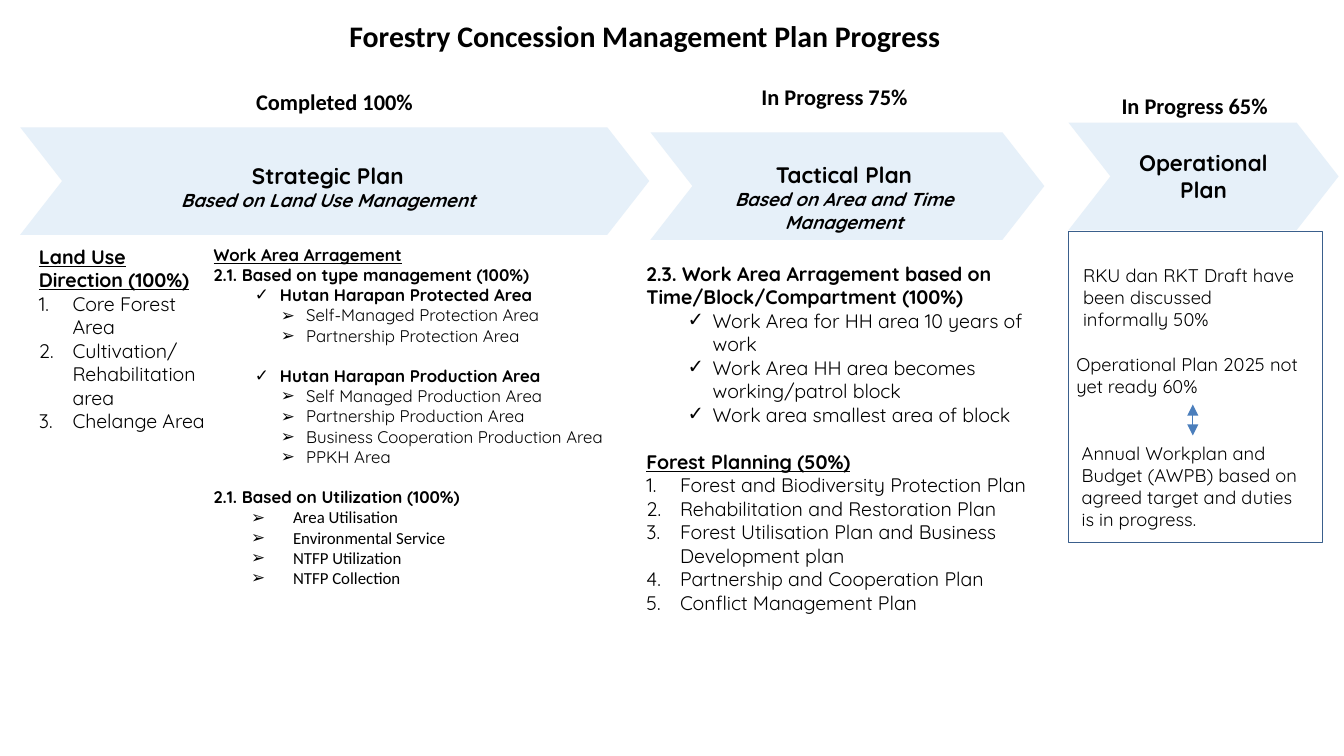
"""Build the forestry concession management plan progress slide."""
from lxml import etree
from pptx import Presentation
from pptx import util as u
from pptx.dml import color
from pptx.enum import shapes, text
from pptx.oxml import ns

COLORS = {"text": "000000", "chevron": "DEEBF7", "frame": "3A5F8C", "arrow": "4B7EBC"}
MARKS = {
    "none": ("buNone", {}, 0, 0),
    "number": ("buAutoNum", {"type": "arabicPeriod"}, 18, -18),
    "tick": ("buChar", {"char": "✓"}, 35.5, -13.5),
    "point": ("buChar", {"char": "➢"}, 49.5, -13.5),
    "wide point": ("buChar", {"char": "➢"}, 42.5, -22.5),
}
CENTER, LEFT = text.PP_ALIGN.CENTER, text.PP_ALIGN.LEFT


def place(box, left, top, width, height):
    """Position a box and make its text wrap from the top."""
    box.left, box.top, box.width, box.height = map(u.Pt, (left, top, width, height))
    frame = box.text_frame
    frame.word_wrap = True
    frame.auto_size = text.MSO_AUTO_SIZE.NONE
    frame.vertical_anchor = text.MSO_ANCHOR.TOP
    return frame


def add_line(frame, words, size, style="", mark="none", gap=0, font="Quicksand", align=LEFT):
    """Add a paragraph; style holds b, i and u for bold, italic and underline."""
    para = frame.paragraphs[0] if not frame.text else frame.add_paragraph()
    para.add_run().text = words
    tag, attributes, margin, indent = MARKS[mark]
    properties = para._p.get_or_add_pPr()
    properties.set("marL", str(u.Pt(margin)))
    properties.set("indent", str(u.Pt(indent)))
    etree.SubElement(properties, ns.qn("a:" + tag), attributes)
    para.alignment = align
    para.space_before = u.Pt(gap)
    para.font.name = font
    para.font.size = u.Pt(size)
    para.font.bold = "b" in style
    para.font.italic = "i" in style
    para.font.underline = "u" in style
    para.font.color.rgb = color.RGBColor.from_string(COLORS["text"])


deck = Presentation()
deck.slide_width, deck.slide_height = u.Pt(720), u.Pt(405)
page = deck.slides.add_slide(deck.slide_layouts.get_by_name("Comparison"))
holders = {holder.placeholder_format.idx: holder for holder in page.placeholders}
spare = holders[3]._element
spare.getparent().remove(spare)

title = place(holders[0], 180, 5.8, 378, 26.6)
add_line(title, "Forestry Concession Management Plan Progress", 16, "b", font="Calibri")

land_use = place(holders[1], 13.7, 127.4, 108, 134.6)
add_line(land_use, "Land Use Direction (100%)", 10.5, "bu")
for words in ("Core Forest Area", "Cultivation/ Rehabilitation area", "Chelange Area"):
    add_line(land_use, words, 10.5, mark="number")

work_area = place(holders[2], 107.3, 127.4, 231.8, 203.8)
add_line(work_area, "Work Area Arragement", 9, "bu")
add_line(work_area, "2.1. Based on type management (100%)", 9, "b")
areas = (
    ("Hutan Harapan Protected Area", 0,
     ("Self-Managed Protection Area", "Partnership Protection Area")),
    ("Hutan Harapan Production Area", 10.8,
     ("Self Managed Production Area", "Partnership Production Area",
      "Business Cooperation Production Area", "PPKH Area")),
)
for heading, gap, parts in areas:
    add_line(work_area, heading, 9, "b", "tick", gap)
    for words in parts:
        add_line(work_area, words, 9, mark="point")
add_line(work_area, "2.1. Based on Utilization (100%)", 9, "b", gap=10.8)
for words in ("Area Utilisation", "Environmental Service", "NTFP Utilization", "NTFP Collection"):
    add_line(work_area, words, 9, mark="wide point", font="Calibri")

tactical = place(holders[4], 339.1, 136.5, 231.8, 223.5)
sections = (
    ("2.3. Work Area Arragement based on Time/Block/Compartment (100%)", "b", 0, "tick",
     ("Work Area for HH area 10 years of work",
      "Work Area HH area becomes working/patrol block",
      "Work area smallest area of block")),
    ("Forest Planning (50%)", "bu", 12.6, "number",
     ("Forest and Biodiversity Protection Plan", "Rehabilitation and Restoration Plan",
      "Forest Utilisation Plan and Business Development plan",
      "Partnership and Cooperation Plan", "Conflict Management Plan")),
)
for heading, style, gap, mark, items in sections:
    add_line(tactical, heading, 10.5, style, gap=gap)
    for words in items:
        add_line(tactical, words, 10.5, mark=mark)

for left, top, width, label in (
    (348.5, 70.9, 211, ""),
    (10.8, 68.2, 337, ""),
    (572.4, 65.7, 144.7, "Operational Plan"),
):
    chevron = page.shapes.add_shape(
        shapes.MSO_SHAPE.CHEVRON, u.Pt(left), u.Pt(top), u.Pt(width), u.Pt(57.6))
    chevron.adjustments[0] = 0.39
    chevron.shadow.inherit = False
    chevron.line.fill.background()
    chevron.fill.solid()
    chevron.fill.fore_color.rgb = color.RGBColor.from_string(COLORS["chevron"])
    tint = chevron._element.spPr.find(".//" + ns.qn("a:srgbClr"))
    etree.SubElement(tint, ns.qn("a:alpha"), val="75000")
    if label:
        add_line(chevron.text_frame, label, 12, "b", align=CENTER)

for name, basis, *spot in (
    ("Tactical Plan", "Based on Area and Time Management", 358.6, 82.8, 187.2, 46),
    ("Strategic Plan", "Based on Land Use Management", 39.6, 83.5, 272.2, 33.8),
):
    frame = place(page.shapes.add_textbox(0, 0, 0, 0), *spot)
    add_line(frame, name, 12, "b", align=CENTER)
    add_line(frame, basis, 10, "bi", align=CENTER)

for words, left, top in (
    ("Completed 100%", 116.6, 43.9),
    ("In Progress 75%", 384.5, 41),
    ("In Progress 65%", 577.4, 46.1),
):
    frame = place(page.shapes.add_textbox(0, 0, 0, 0), left, top, 125.3, 21.6)
    add_line(frame, words, 12, "b", font="Calibri", align=CENTER)

for words, *spot in (
    ("RKU dan RKT Draft have been discussed informally 50%", 573.1, 138.2, 130.3, 42.5),
    ("Operational Plan 2025 not yet ready 60%", 569.5, 185.8, 139, 31),
    ("Annual Workplan and Budget (AWPB) based on agreed target and duties is in progress.",
     572.4, 233.3, 133.9, 54.7),
):
    add_line(place(page.shapes.add_textbox(0, 0, 0, 0), *spot), words, 9.8)

border = page.shapes.add_shape(
    shapes.MSO_SHAPE.RECTANGLE, u.Pt(572.4), u.Pt(123.8), u.Pt(136.1), u.Pt(167))
border.shadow.inherit = False
border.fill.background()
border.line.color.rgb = color.RGBColor.from_string(COLORS["frame"])
border.line.width = u.Pt(0.5)

arrow = page.shapes.add_connector(
    shapes.MSO_CONNECTOR.STRAIGHT, u.Pt(639), u.Pt(216.7), u.Pt(639), u.Pt(233.3))
arrow.line.color.rgb = color.RGBColor.from_string(COLORS["arrow"])
arrow.line.width = u.Pt(0.75)
for end in ("a:headEnd", "a:tailEnd"):
    etree.SubElement(arrow.line._get_or_add_ln(), ns.qn(end), type="triangle")
etree.SubElement(arrow._element.spPr, ns.qn("a:effectLst"))

deck.save("out.pptx")
